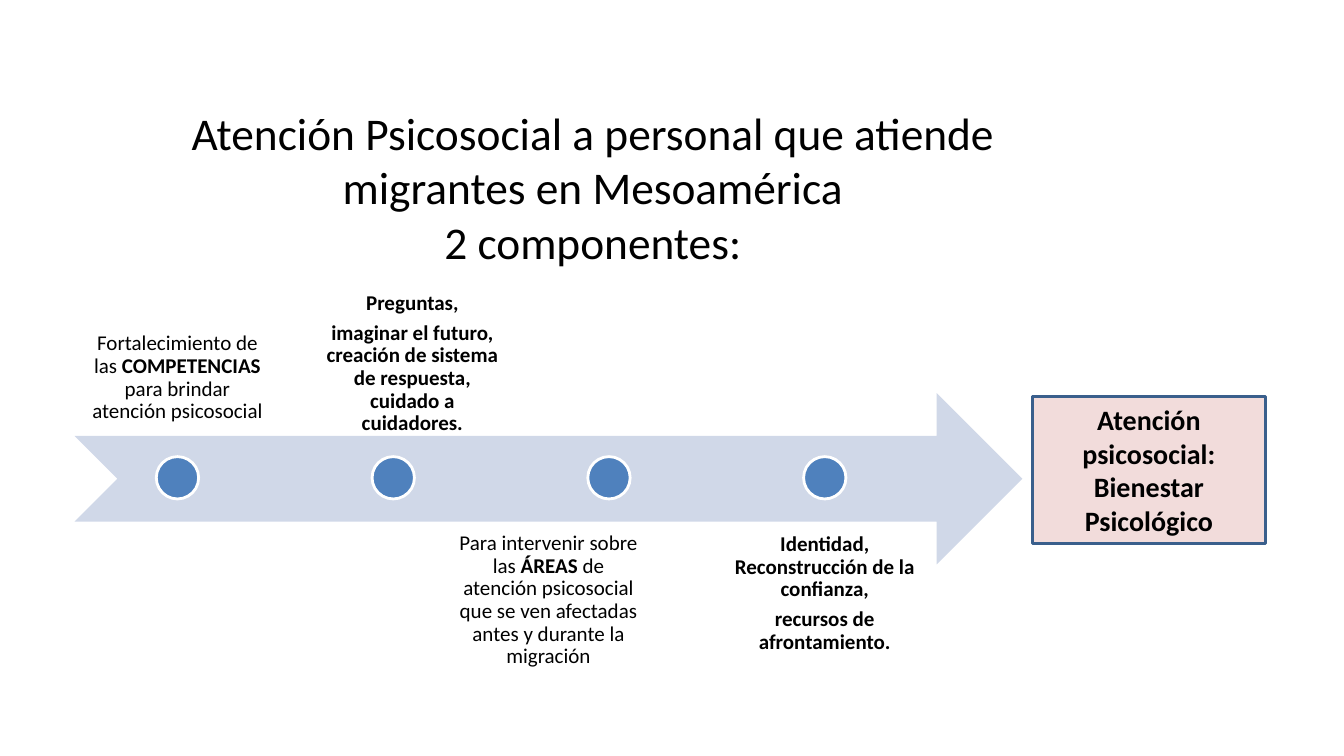
"""Build the slide on psychosocial care for staff who assist migrants."""
from pptx import Presentation
from pptx.dml.color import RGBColor
from pptx.enum.shapes import MSO_SHAPE
from pptx.enum.text import MSO_ANCHOR, PP_ALIGN
from pptx.util import Inches, Pt

HUES = {"text": "000000", "arrow": "D0D8E8", "dot": "4F81BD",
        "ring": "FFFFFF", "goal": "F2DCDB", "edge": "3A5F8C"}
LABEL = {"line_spacing": 0.9, "space_after": Pt(5.25)}


def write(shape, paras, size, anchor, inset=0.1, form=None):
    """Fill a shape with centred text; words between asterisks are bold."""
    frame = shape.text_frame
    edges = {"margin_left": inset, "margin_right": inset,
             "margin_top": inset if form else 0.05,
             "margin_bottom": inset if form else 0.05}
    for name, value in edges.items():
        setattr(frame, name, Inches(value))
    frame.word_wrap = True
    frame.vertical_anchor = anchor
    for num, text in enumerate(paras):
        para = frame.add_paragraph() if num else frame.paragraphs[0]
        for name, value in {"alignment": PP_ALIGN.CENTER, **(form or {})}.items():
            setattr(para, name, value)
        for row, line in enumerate(text.split("\n")):
            if row:
                para.add_line_break()
            for part, words in enumerate(line.split("*")):
                if words:
                    run = para.add_run()
                    run.text = words
                    font = {"name": "Calibri", "size": Pt(size), "bold": part % 2 == 1}
                    for name, value in font.items():
                        setattr(run.font, name, value)
                    run.font.color.rgb = RGBColor.from_string(HUES["text"])


def draw(kind, box, fill, line=None):
    """Add a flat preset shape with an optional outline."""
    shape = slide.shapes.add_shape(kind, *map(Inches, box))
    shape.shadow.inherit = False
    shape.fill.solid()
    shape.fill.fore_color.rgb = RGBColor.from_string(HUES[fill])
    if line:
        shape.line.color.rgb = RGBColor.from_string(HUES[line])
        shape.line.width = Pt(2)
    else:
        shape.line.fill.background()
    return shape


deck = Presentation()
deck.slide_width, deck.slide_height = Inches(13.33), Inches(7.5)
slide = deck.slides.add_slide(deck.slide_layouts[6])

title = slide.shapes.add_textbox(*map(Inches, (1.18, 1.13, 9.4, 1.44)))
write(title, ["Atención Psicosocial a personal que atiende migrantes en Mesoamérica"
              "\n2 componentes:"], 32.4, MSO_ANCHOR.MIDDLE)

draw(MSO_SHAPE.NOTCHED_RIGHT_ARROW, (0.74, 3.9, 9.4, 1.7), "arrow")

steps = [
    (0.74, 2.62, MSO_ANCHOR.BOTTOM,
     ["Fortalecimiento de las *COMPETENCIAS* para brindar atención psicosocial"]),
    (3.07, 2.74, MSO_ANCHOR.BOTTOM,
     ["*Preguntas,*",
      "*imaginar el futuro, creación de sistema de respuesta, cuidado a cuidadores.*"]),
    (4.42, 5.16, MSO_ANCHOR.TOP,
     ["Para intervenir sobre las *ÁREAS* de atención psicosocial que se ven "
      "afectadas antes y durante la migración"]),
    (7.16, 5.17, MSO_ANCHOR.TOP,
     ["*Identidad, Reconstrucción de la confianza,*", "*recursos de afrontamiento.*"]),
]
for num, (left, top, anchor, paras) in enumerate(steps):
    label = slide.shapes.add_textbox(*map(Inches, (left, top, 2.04, 1.7)))
    write(label, paras, 15, anchor, 0.12, LABEL)
    draw(MSO_SHAPE.OVAL, (1.55 + 2.14 * num, 4.53, 0.42, 0.42), "dot", "ring")

goal = draw(MSO_SHAPE.RECTANGLE, (10.24, 3.93, 2.31, 1.46), "goal", "edge")
write(goal, ["*Atención psicosocial: Bienestar Psicológico*"], 20, MSO_ANCHOR.MIDDLE)

deck.save("out.pptx")
